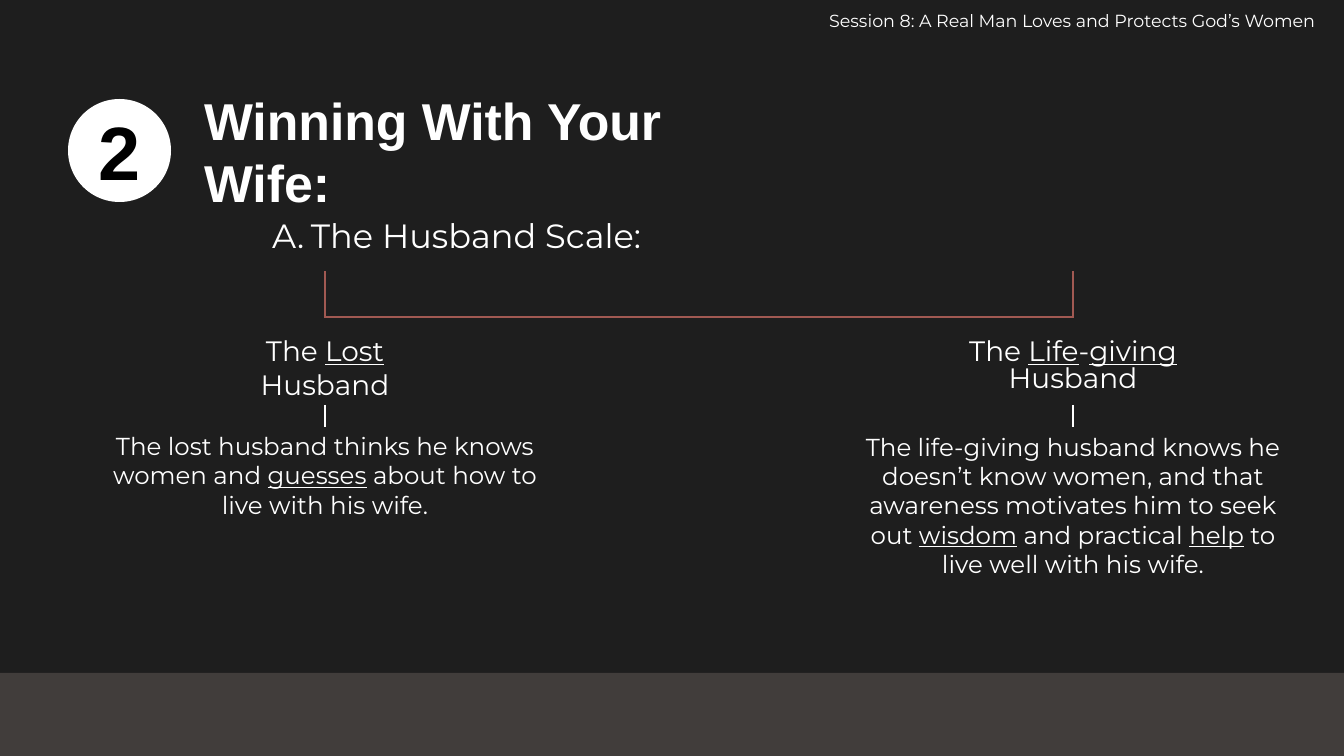
from lxml.etree import SubElement
from pptx import Presentation
from pptx.dml.color import RGBColor
from pptx.enum.shapes import MSO_CONNECTOR, MSO_SHAPE
from pptx.enum.text import MSO_ANCHOR, MSO_AUTO_SIZE, PP_ALIGN
from pptx.oxml.ns import qn
from pptx.util import Pt

PX = 914400 / 50.4
WHITE, BLACK, DARK, BROWN, RED = "FFFFFF", "000000", "1E1E1E", "413D3B", "A15952"


def px(n):
    return round(n * PX)


def rgb(value):
    return RGBColor.from_string(value)


def place(shape, box):
    shape.left, shape.top, shape.width, shape.height = map(px, box)


def write(shape, runs, size, font="Montserrat", color=WHITE, bold=False,
          align=PP_ALIGN.CENTER, anchor=MSO_ANCHOR.MIDDLE, inset=3, wrap=True, spacing=1.0):
    """Fill a shape with one paragraph; words in a tuple are underlined."""
    tf = shape.text_frame
    tf.auto_size = MSO_AUTO_SIZE.NONE
    tf.word_wrap = wrap
    tf.vertical_anchor = anchor
    tf.margin_left = tf.margin_top = tf.margin_right = tf.margin_bottom = px(inset)
    p = tf.paragraphs[0]
    p.alignment = align
    p.line_spacing = spacing
    p.space_before = Pt(0)
    for item in runs:
        r = p.add_run()
        r.text = item[0] if isinstance(item, tuple) else item
        r.font.underline = isinstance(item, tuple)
        r.font.name, r.font.size, r.font.bold = font, Pt(size), bold
        r.font.color.rgb = rgb(color)
    return p


def add_text(s, box, runs, size, **style):
    return write(s.shapes.add_textbox(*map(px, box)), runs, size, **style)


def add_block(s, kind, box, color):
    sp = s.shapes.add_shape(kind, *map(px, box))
    sp.shadow.inherit = False
    sp.fill.solid()
    sp.fill.fore_color.rgb = rgb(color)
    sp.line.fill.background()
    return sp


def add_line(s, x1, y1, x2, y2, color, width):
    line = s.shapes.add_connector(MSO_CONNECTOR.STRAIGHT, *map(px, (x1, y1, x2, y2)))
    line.line.color.rgb = rgb(color)
    line.line.width = Pt(width)
    SubElement(line._element.spPr, qn("a:effectLst"))


def add_frame(s, w, h):
    """Dark background, session name and footer band."""
    s.background.fill.solid()
    s.background.fill.fore_color.rgb = rgb(DARK)
    add_block(s, MSO_SHAPE.RECTANGLE, (0, h - 83, w, 83), BROWN)
    add_text(s, (w - 520, 7, 496, 27), ["Session 8: A Real Man Loves and Protects God’s Women"],
             25, wrap=False)


def add_heading(s, x, y, number, title, point):
    """Numbered disc, title and lettered point."""
    disc = add_block(s, MSO_SHAPE.OVAL, (x, y, 103, 103), WHITE)
    write(disc, [number], 108, font="Arial", color=BLACK, bold=True, inset=0)

    place(s.shapes.title, (x + 133, y + 18, 595, 67))
    write(s.shapes.title, [title], 74, font="Arial", bold=True, align=PP_ALIGN.LEFT)

    body = s.placeholders[1]
    place(body, (x + 201, y + 113, 1019, 46))
    p = write(body, [point], 48, align=PP_ALIGN.LEFT, anchor=MSO_ANCHOR.TOP)
    pPr = p._p.get_or_add_pPr()
    pPr.set("marL", str(px(39)))
    pPr.set("indent", str(-px(39)))
    SubElement(pPr, qn("a:buFont"), typeface="Montserrat")
    SubElement(pPr, qn("a:buAutoNum"), type="alphaUcPeriod")


def add_branch(s, x, y, w, label, label_w, label_spacing, text, text_h):
    """One end of the scale: bracket arm, label, tick and description."""
    mid = x + w / 2
    add_line(s, mid, y, mid, y + 47, RED, 4)
    add_text(s, (mid - label_w / 2, y + 60, label_w, 72), label, 40, spacing=label_spacing)
    add_line(s, mid, y + 134, mid, y + 156, WHITE, 2)
    add_text(s, (x, y + 157, w, text_h), text, 35)


def add_scale(s, x, y, w):
    """Two branches joined by a bracket."""
    col = 444
    right = x + w - col
    add_line(s, x + col / 2 - 1, y + 46, right + col / 2 + 1, y + 46, RED, 4)
    add_branch(s, x, y, col, ["The ", ("Lost",), " Husband"], 192, 1.0,
               ["The lost husband thinks he knows women and ", ("guesses",),
                " about how to live with his wife."], 94)
    add_branch(s, right, y, col, ["The ", ("Life",), "-", ("giving",), " Husband"], 230, 0.8,
               ["The life-giving husband knows he doesn’t know women, and that awareness "
                "motivates him to seek out ", ("wisdom",), " and practical ", ("help",),
                " to live well with his wife."], 154)


def main():
    w, h = 1344, 756
    prs = Presentation()
    prs.slide_width, prs.slide_height = px(w), px(h)
    s = prs.slides.add_slide(prs.slide_layouts[1])
    add_frame(s, w, h)
    add_heading(s, 68, 99, "2", "Winning With Your Wife:", "The Husband Scale:")
    add_scale(s, 103, 271, 1192)
    prs.save("out.pptx")


if __name__ == "__main__":
    main()
